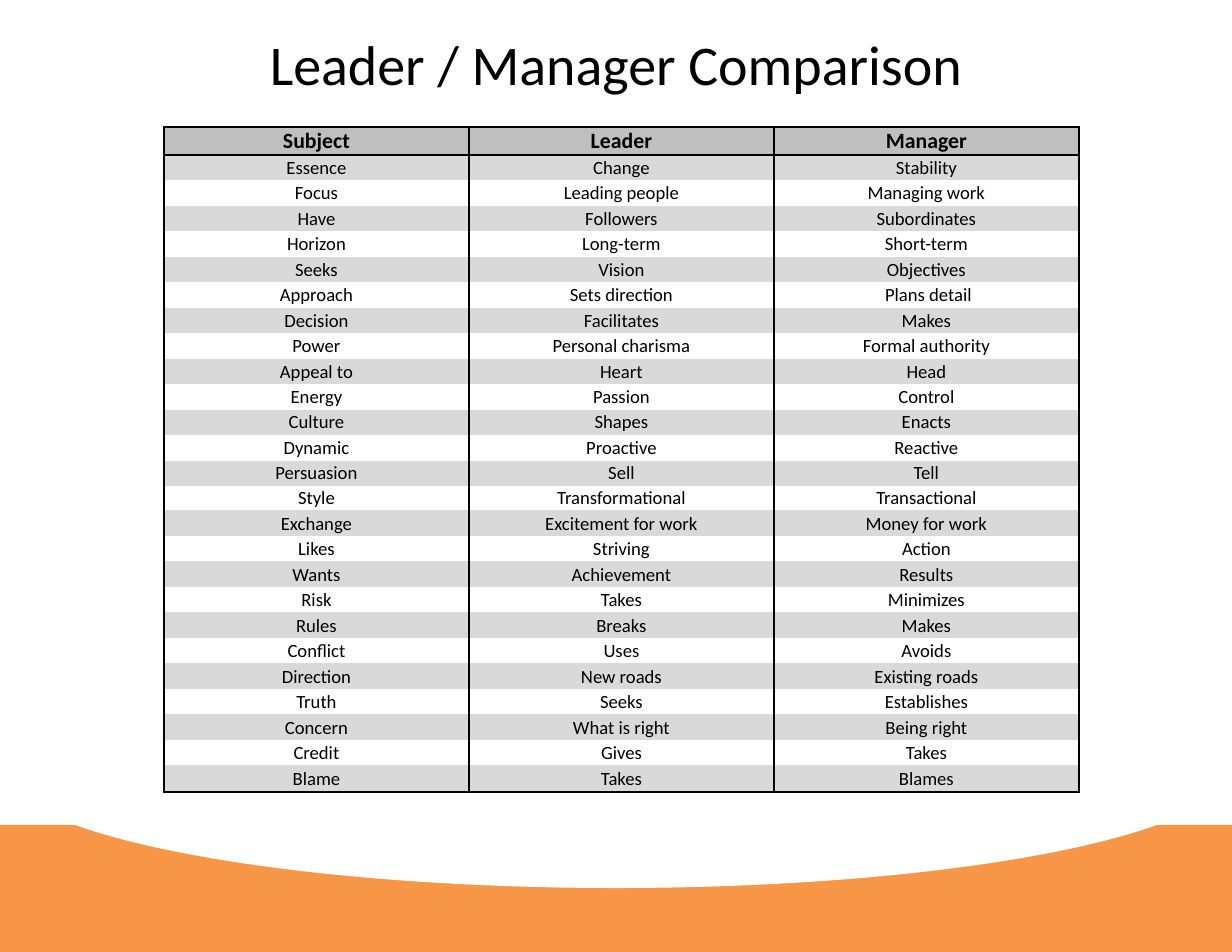
import pptx
import pptx.util
import pptx.dml.color
import pptx.enum.shapes
import pptx.enum.text
import pptx.oxml
import pptx.oxml.ns

COLOURS = {"text": "000000", "border": "000000", "header": "BFBFBF",
           "band": "D9D9D9", "wave": "F79646", "page": "FFFFFF"}
EMU_PER_PX = 914400 / 112

COMPARISON = """Subject|Leader|Manager
Essence|Change|Stability
Focus|Leading people|Managing work
Have|Followers|Subordinates
Horizon|Long-term|Short-term
Seeks|Vision|Objectives
Approach|Sets direction| Plans detail
Decision|Facilitates|Makes
Power|Personal charisma|Formal authority
Appeal to|Heart|Head
Energy|Passion|Control
Culture|Shapes|Enacts
Dynamic|Proactive|Reactive
Persuasion|Sell|Tell
Style|Transformational|Transactional
Exchange|Excitement for work|Money for work
Likes|Striving|Action
Wants|Achievement|Results
Risk|Takes|Minimizes
Rules|Breaks|Makes
Conflict|Uses|Avoids
Direction|New roads|Existing roads
Truth|Seeks|Establishes
Concern|What is right|Being right
Credit|Gives|Takes
Blame|Takes|Blames"""


def px(length):
    return pptx.util.Emu(round(length * EMU_PER_PX))


def colour(name):
    return pptx.dml.color.RGBColor.from_string(COLOURS[name])


class Page:
    font = "Calibri"

    def __init__(self, deck):
        self.slide = deck.slides.add_slide(deck.slide_layouts[5])

    def text(self, holder, words, size, bold=False):
        holder.vertical_anchor = pptx.enum.text.MSO_ANCHOR.MIDDLE
        frame = getattr(holder, "text_frame", holder)
        para = frame.paragraphs[0]
        para.alignment = pptx.enum.text.PP_ALIGN.CENTER
        span = para.add_run()
        span.text = words
        span.font.name = self.font
        span.font.size = pptx.util.Pt(size)
        span.font.bold = bold
        span.font.color.rgb = colour("text")

    def title(self, words, left, top, width, height):
        box = self.slide.shapes.title
        box.left, box.top, box.width, box.height = map(px, (left, top, width, height))
        self.text(box.text_frame, words, 36)

    def shape(self, kind, fill, left, top, width, height):
        shape = self.slide.shapes.add_shape(kind, *map(px, (left, top, width, height)))
        shape.shadow.inherit = False
        shape.fill.solid()
        shape.fill.fore_color.rgb = colour(fill)
        shape.line.fill.background()

    def border(self, cell, sides):
        properties = cell._tc.get_or_add_tcPr()
        for side in "LRTB":
            paint = (f'<a:solidFill><a:srgbClr val="{COLOURS["border"]}"/></a:solidFill>'
                     if side in sides else "<a:noFill/>")
            properties.append(pptx.oxml.parse_xml(
                f'<a:ln{side} {pptx.oxml.ns.nsdecls("a")} w="12700">{paint}</a:ln{side}>'))

    def cell(self, cell, words, size, bold, fill, sides):
        cell.margin_left = cell.margin_top = cell.margin_right = px(1)
        cell.margin_bottom = 0
        self.border(cell, sides)
        if fill:
            cell.fill.solid()
            cell.fill.fore_color.rgb = colour(fill)
        else:
            cell.fill.background()
        self.text(cell, words, size, bold)

    def table(self, rows, left, top, column_width, row_edges):
        columns = len(rows[0])
        table = self.slide.shapes.add_table(
            len(rows), columns, px(left), px(top),
            px(column_width * columns), px(row_edges[-1])).table
        table.first_row = table.horz_banding = False
        for column in table.columns:
            column.width = px(column_width)
        for index, texts in enumerate(rows):
            table.rows[index].height = px(row_edges[index + 1] - row_edges[index])
            header = index == 0
            fill = "header" if header else "band" if index % 2 else None
            sides = "LR" + "T" * (index < 2) + "B" * (header or index == len(rows) - 1)
            for column, words in enumerate(texts):
                self.cell(table.cell(index, column), words,
                          14 if header else 12, header, fill, sides)


def main():
    deck = pptx.Presentation()
    deck.slide_width, deck.slide_height = px(1232), px(952)
    page = Page(deck)
    shapes = pptx.enum.shapes.MSO_SHAPE
    page.shape(shapes.RECTANGLE, "wave", -1, 825, 1233, 127)
    page.shape(shapes.OVAL, "page", -1, 645, 1234, 243)
    page.title("Leader / Manager Comparison", 0, 0, 1232, 127)
    rows = [line.split("|") for line in COMPARISON.split("\n")]
    row_edges = [0] + [28 + round(611 * step / 24) for step in range(25)] + [666]
    page.table(rows, 164, 127, 305, row_edges)
    deck.save("out.pptx")


if __name__ == "__main__":
    main()
